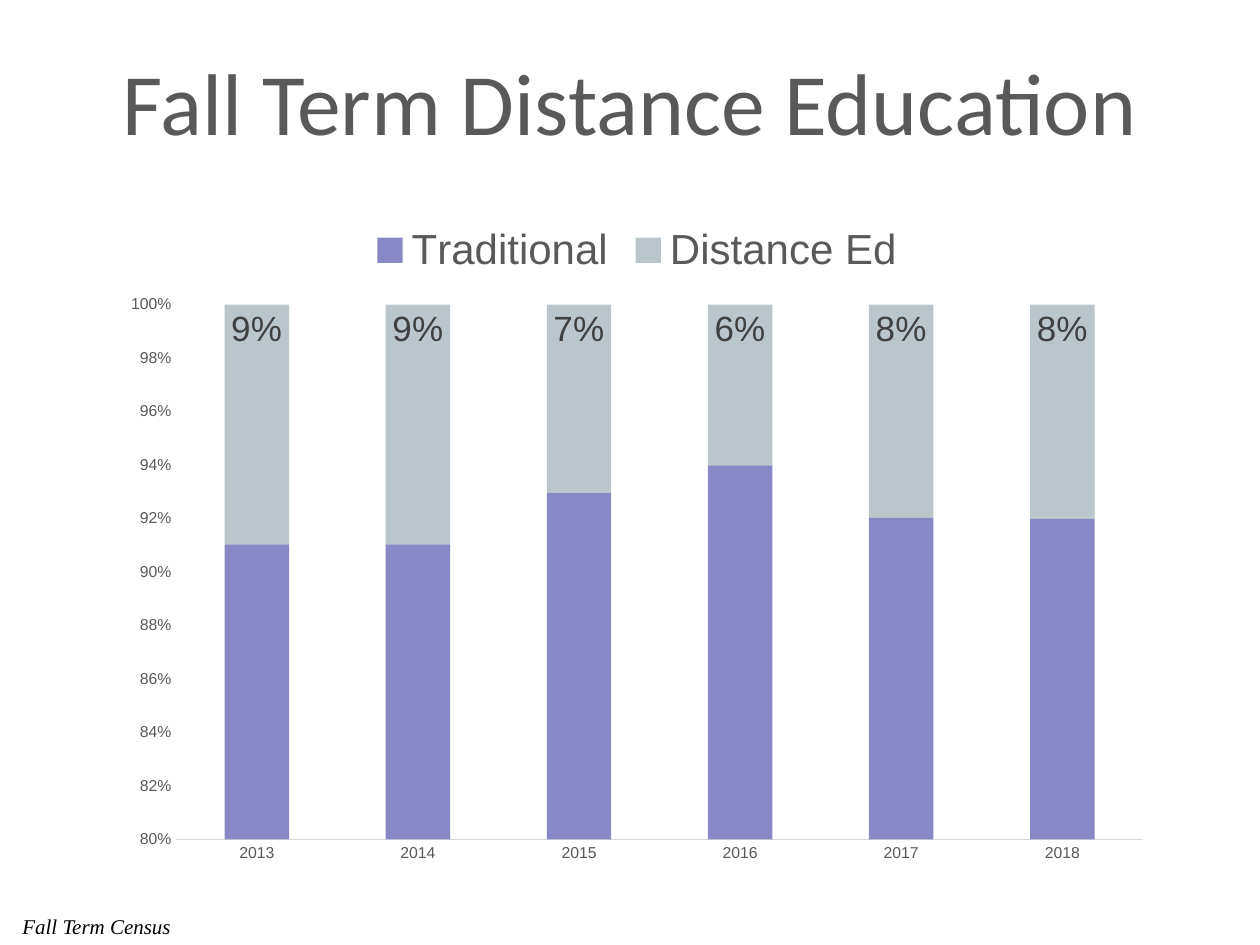
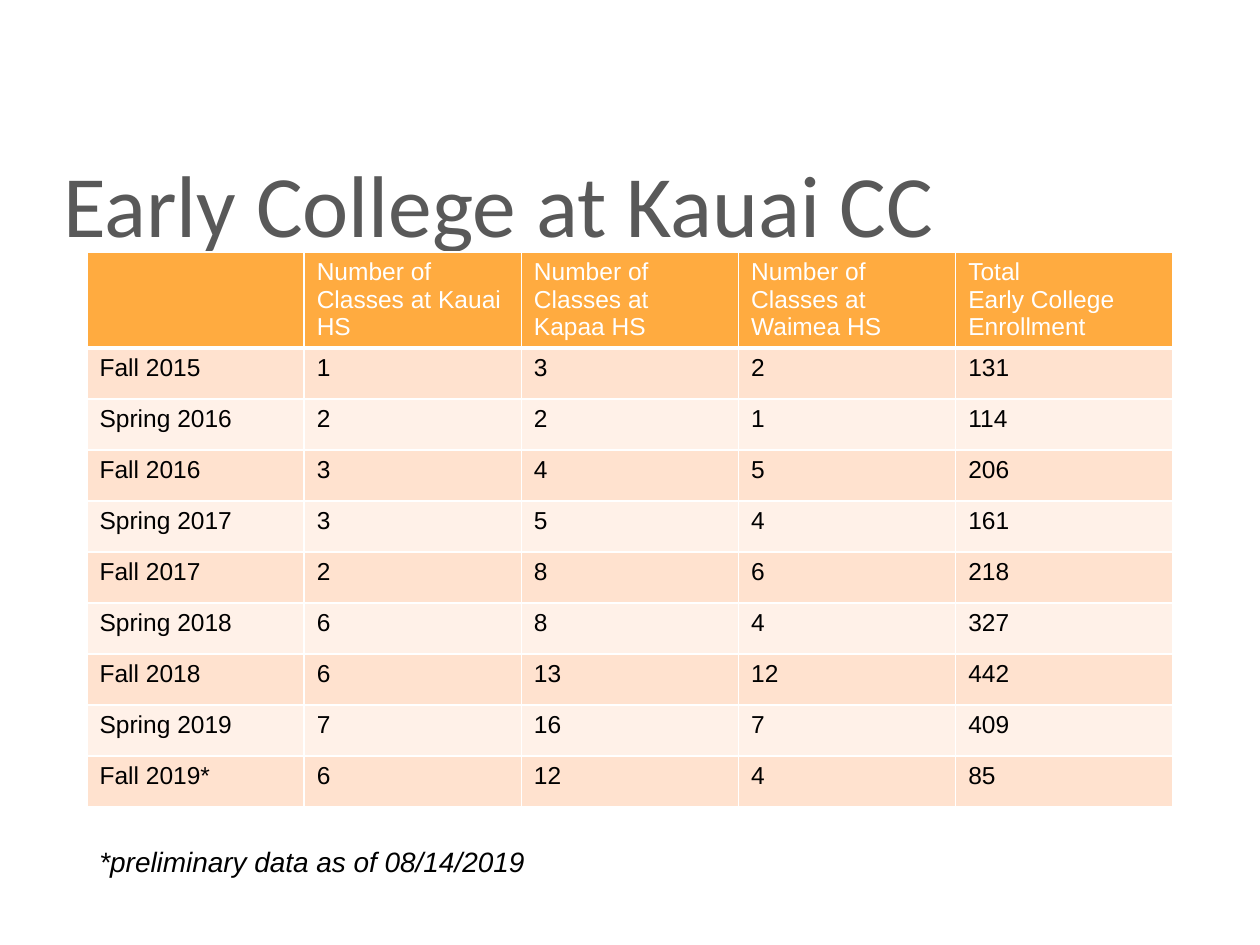
import pptx
import pptx.chart.data
import pptx.dml.color
import pptx.enum.chart
import pptx.enum.text
import pptx.oxml
import pptx.oxml.ns
import pptx.util

RGB = pptx.dml.color.RGBColor
WHITE = RGB(0xFF, 0xFF, 0xFF)
BLACK = RGB(0, 0, 0)
GREY = RGB(0x59, 0x59, 0x59)
LABEL = RGB(0x40, 0x40, 0x40)
AXIS = RGB(0xD9, 0xD9, 0xD9)
PURPLE = RGB(0x70, 0x6F, 0xBB)
SLATE = RGB(0x78, 0x90, 0x9C)
ORANGE = RGB(0xFF, 0xAB, 0x40)
BANDS = [RGB(0xFF, 0xE2, 0xCF), RGB(0xFF, 0xF1, 0xE8)]

TITLE_FONT, BODY_FONT, SOURCE_FONT = "Calibri", "Arial", "Times New Roman"
ALIGN = pptx.enum.text.PP_ALIGN
PX_PER_INCH = 126
TITLE_ONLY = 5


def px(n):
    return pptx.util.Emu(round(n * pptx.util.Inches(1) / PX_PER_INCH))


class Deck:
    def __init__(self, w, h):
        self.prs = pptx.Presentation()
        self.prs.slide_width, self.prs.slide_height = px(w), px(h)
        self.s = None

    def font(self, f, size, color, name=BODY_FONT, italic=False):
        f.size, f.name = pptx.util.Pt(size), name
        f.color.rgb = color
        f.bold, f.italic = False, italic

    def slide(self, title, x, y, w, h, align):
        self.s = self.prs.slides.add_slide(self.prs.slide_layouts[TITLE_ONLY])
        sp = self.s.shapes.title
        sp.left, sp.top, sp.width, sp.height = map(px, (x, y, w, h))
        tf = sp.text_frame
        tf.text = title
        tf.word_wrap = True
        tf.auto_size = pptx.enum.text.MSO_AUTO_SIZE.NONE
        tf.vertical_anchor = pptx.enum.text.MSO_ANCHOR.BOTTOM
        tf.margin_left = tf.margin_right = tf.margin_bottom = 0
        tf.margin_top = pptx.util.Inches(0.05)
        p = tf.paragraphs[0]
        p.alignment = align
        self.font(p.runs[0].font, 50, GREY, TITLE_FONT)

    def note(self, text, x, y, w, h, size, name=BODY_FONT, align=ALIGN.LEFT):
        tf = self.s.shapes.add_textbox(*map(px, (x, y, w, h))).text_frame
        tf.text = text
        tf.word_wrap = True
        p = tf.paragraphs[0]
        p.alignment = align
        self.font(p.runs[0].font, size, BLACK, name, italic=True)

    def fill_series(self, series, color, alpha):
        series.format.fill.solid()
        series.format.fill.fore_color.rgb = color
        clr = series.format.fill._xPr.find(".//" + pptx.oxml.ns.qn("a:srgbClr"))
        clr.append(pptx.oxml.parse_xml(
            f'<a:alpha {pptx.oxml.ns.nsdecls("a")} val="{alpha * 1000}"/>'))

    def stacked_chart(self, x, y, w, h, cats, series, labelled):
        data = pptx.chart.data.CategoryChartData(number_format="0%")
        data.categories = cats
        for name, vals, _, _ in series:
            data.add_series(name, vals)
        kind = pptx.enum.chart.XL_CHART_TYPE.COLUMN_STACKED_100
        chart = self.s.shapes.add_chart(kind, *map(px, (x, y, w, h)), data).chart
        self.font(chart.font, 10, BLACK)
        chart.has_title = False
        chart.has_legend = True
        chart.legend.position = pptx.enum.chart.XL_LEGEND_POSITION.TOP
        chart.legend.include_in_layout = False
        self.font(chart.legend.font, 24, GREY)

        for axis in (chart.category_axis, chart.value_axis):
            axis.has_major_gridlines = False
            axis.major_tick_mark = pptx.enum.chart.XL_TICK_MARK.NONE
            axis.minor_tick_mark = pptx.enum.chart.XL_TICK_MARK.NONE
            self.font(axis.tick_labels.font, 9, GREY)
        line = chart.category_axis.format.line
        line.color.rgb, line.width = AXIS, pptx.util.Pt(0.75)
        val = chart.value_axis
        val.format.line.fill.background()
        val.minimum_scale, val.maximum_scale, val.major_unit = 0.8, 1, 0.02
        val.tick_labels.number_format = "0%"
        val.tick_labels.number_format_is_linked = False

        plot = chart.plots[0]
        plot.gap_width, plot.overlap, plot.vary_by_categories = 150, 100, False
        for ser, (name, _, color, alpha) in zip(plot.series, series):
            self.fill_series(ser, color, alpha)
            if name == labelled:
                labels = ser.data_labels
                labels.show_value = True
                labels.position = pptx.enum.chart.XL_LABEL_POSITION.INSIDE_END
                labels.number_format = "0%"
                labels.number_format_is_linked = False
                self.font(labels.font, 20, LABEL)

    def borders(self, cell, widths):
        tcPr = cell._tc.get_or_add_tcPr()
        for i, (side, pt) in enumerate(widths.items()):
            tcPr.insert(i, pptx.oxml.parse_xml(
                f'<a:ln{side} {pptx.oxml.ns.nsdecls("a")} w="{pptx.util.Pt(pt)}">'
                f'<a:solidFill><a:srgbClr val="{WHITE}"/></a:solidFill></a:ln{side}>'))

    def table(self, x, y, w, header_h, row_h, rows):
        h = header_h + row_h * (len(rows) - 1)
        frame = self.s.shapes.add_table(len(rows), len(rows[0]), *map(px, (x, y, w, h)))
        tbl = frame.table
        for i, values in enumerate(rows):
            head = i == 0
            tbl.rows[i].height = px(header_h if head else row_h)
            for j, value in enumerate(values):
                cell = tbl.cell(i, j)
                cell.text = str(value)
                cell.fill.solid()
                cell.fill.fore_color.rgb = ORANGE if head else BANDS[(i - 1) % 2]
                self.borders(cell, {"L": 1, "R": 1, "T": 3 if i == 1 else 1,
                                    "B": 3 if head else 1})
                for r in cell.text_frame.paragraphs[0].runs:
                    self.font(r.font, 14, WHITE if head else BLACK)


def main():
    deck = Deck(1260, 945)

    deck.slide("Fall Term Distance Education", 87, 50, 1086, 103, ALIGN.CENTER)
    deck.stacked_chart(
        110, 209, 1054, 667,
        ["2013", "2014", "2015", "2016", "2017", "2018"],
        [("Traditional", [0.914, 0.914, 0.925, 0.939, 0.923, 0.919], PURPLE, 82),
         ("Distance Ed", [0.09, 0.09, 0.07, 0.06, 0.08, 0.08], SLATE, 51)],
        labelled="Distance Ed")
    deck.note("Fall Term Census", 10, 907, 1234, 38, 12, SOURCE_FONT, ALIGN.JUSTIFY)

    deck.slide("Early College at Kauai CC", 63, 97, 1134, 158, ALIGN.LEFT)
    schools = ["Kauai", "Kapaa", "Waimea"]
    header = ["", *(f"Number of Classes at {name} HS" for name in schools),
              "Total \vEarly College Enrollment"]
    deck.table(87, 252, 1086, 96, 51, [
        header,
        ["Fall 2015", 1, 3, 2, 131],
        ["Spring 2016", 2, 2, 1, 114],
        ["Fall 2016", 3, 4, 5, 206],
        ["Spring 2017", 3, 5, 4, 161],
        ["Fall 2017", 2, 8, 6, 218],
        ["Spring 2018", 6, 8, 4, 327],
        ["Fall 2018", 6, 13, 12, 442],
        ["Spring 2019", 7, 16, 7, 409],
        ["Fall 2019*", 6, 12, 4, 85],
    ])
    deck.note("*preliminary data as of 08/14/2019", 87, 838, 1086, 47, 16)

    deck.prs.save("out.pptx")


if __name__ == "__main__":
    main()
